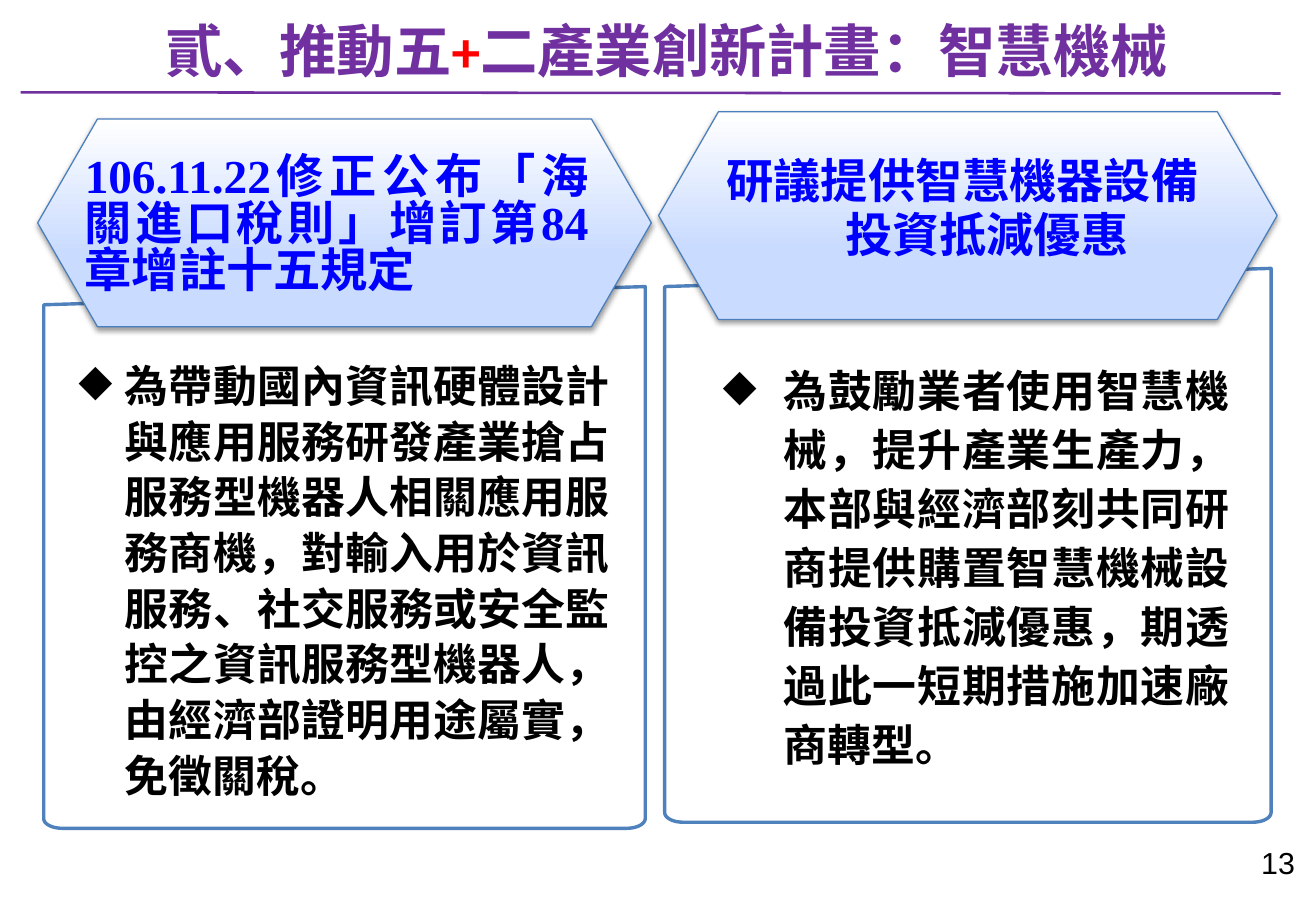
import math
from lxml import etree
from pptx import Presentation
from pptx.dml.color import RGBColor
from pptx.enum.shapes import MSO_CONNECTOR, MSO_SHAPE
from pptx.enum.text import MSO_AUTO_SIZE, PP_ALIGN
from pptx.oxml.ns import qn
from pptx.util import Inches, Pt

STRAIGHT = MSO_CONNECTOR.STRAIGHT
HEXAGON = MSO_SHAPE.HEXAGON
GROW = MSO_AUTO_SIZE.SHAPE_TO_FIT_TEXT
LEFT, CENTER, JUSTIFY = PP_ALIGN.LEFT, PP_ALIGN.CENTER, PP_ALIGN.JUSTIFY

THEME = {
    "purple": RGBColor(0x70, 0x30, 0xA0),
    "red": RGBColor(0xFF, 0x00, 0x00),
    "blue": RGBColor(0x00, 0x00, 0xFF),
    "black": RGBColor(0x00, 0x00, 0x00),
    "white": RGBColor(0xFF, 0xFF, 0xFF),
    "panel_line": RGBColor(0x4F, 0x81, 0xBD),
    "hexagon_line": RGBColor(0x4B, 0x7E, 0xBC),
    "hexagon_fill": RGBColor(0xC9, 0xDB, 0xFF),
    "serif": "Times New Roman",
    "sans": "Calibri",
    "cjk": "Noto Sans CJK TC",
    "number": "Arial",
    "title_size": Pt(34),
    "heading_size": Pt(28),
    "body_size": Pt(26),
    "number_size": Pt(18),
}


def add_text(box, runs, size, color, font, align, bold=True, wrap=True,
             indent=(0, 0), line=None, before=0, after=0, bullet=None):
    shape = slide.shapes.add_textbox(*map(Inches, box))
    frame = shape.text_frame
    frame.word_wrap = wrap
    frame.auto_size = GROW
    paragraph = frame.paragraphs[0]
    properties = paragraph._p.get_or_add_pPr()
    properties.set("marL", str(Inches(indent[0])))
    properties.set("indent", str(Inches(indent[1])))
    if bullet:
        etree.SubElement(properties, qn("a:buChar")).set("char", bullet)
    paragraph.alignment = align
    paragraph.space_before = Pt(before)
    paragraph.space_after = Pt(after)
    if line:
        paragraph.line_spacing = Pt(line)
    paragraph.font.size = THEME[size]
    paragraph.font.bold = bold
    paragraph.font.name = THEME[font]
    paragraph.font.color.rgb = THEME[color]
    for text, run_font, run_color in runs:
        run = paragraph.add_run()
        run.text = text
        if run_font:
            run.font.name = THEME[run_font]
        if run_color:
            run.font.color.rgb = THEME[run_color]


presentation = Presentation()
presentation.slide_width = Inches(10.83)
presentation.slide_height = Inches(7.5)
slide = presentation.slides.add_slide(presentation.slide_layouts[6])

title_rule = slide.shapes.add_connector(
    STRAIGHT, Inches(0.17), Inches(0.76), Inches(10.54), Inches(0.77))
title_rule.line.color.rgb = THEME["purple"]
title_rule.line.width = Pt(1.5)
etree.SubElement(title_rule._element.spPr, qn("a:effectLst"))

CORNER_WIDTH, CORNER_HEIGHT = 0.15, 0.08
QUARTER = [math.radians(angle) for angle in range(0, 91, 10)]

columns = [
    {
        "panel": (0.36, 2.36, 5.31, 6.82),
        "hexagon": (0.31, 0.98, 5.05, 1.71),
        "heading": dict(
            box=(0.6, 1.23, 4.34, 1.28), align=JUSTIFY, line=28,
            runs=[("106.11.22修正公布", None, None), ("「", "cjk", None),
                  ("海關進口稅則", None, None), ("」", "cjk", None),
                  ("增訂第84章增註十五規定", None, None)]),
        "body": dict(
            box=(0.55, 2.88, 4.57, 3.77), indent=(0.38, -0.38), line=33, before=12,
            runs=[("為帶動國內資訊硬體設計與應用服務研發產業搶占服務型機器人相關應用服務商機，"
                   "對輸入用於資訊服務、社交服務或安全監控之資訊服務型機器人，"
                   "由經濟部證明用途屬實，免徵關稅。", None, None)]),
    },
    {
        "panel": (5.47, 2.21, 10.46, 6.77),
        "hexagon": (5.42, 0.92, 5.09, 1.71),
        "heading": dict(
            box=(5.85, 1.22, 4.14, 1), align=CENTER, line=32, indent=(0.4, -0.4),
            runs=[("研議提供智慧機器設備投資抵減優惠", None, None)]),
        "body": dict(
            box=(5.85, 2.89, 4.37, 3.54), indent=(0.5, -0.5), line=35,
            runs=[("為鼓勵業者使用智慧機械，提升產業生產力，本部與經濟部刻共同研商提供"
                   "購置智慧機械設備投資抵減優惠，期透過此一短期措施加速廠商轉型。", None, None)]),
    },
]

for column in columns:
    left, top, right, bottom = column["panel"]
    corner_y = bottom - CORNER_HEIGHT
    right_corner = [(right - CORNER_WIDTH * (1 - math.cos(angle)),
                     corner_y + CORNER_HEIGHT * math.sin(angle)) for angle in QUARTER]
    left_corner = [(left + right - x, y) for x, y in reversed(right_corner)]
    outline = right_corner + left_corner + [(left, top + 0.15)]
    builder = slide.shapes.build_freeform(Inches(right), Inches(top))
    builder.add_line_segments([(Inches(x), Inches(y)) for x, y in outline], close=True)
    panel = builder.convert_to_shape()
    panel.shadow.inherit = False
    panel.fill.solid()
    panel.fill.fore_color.rgb = THEME["white"]
    panel.line.color.rgb = THEME["panel_line"]
    panel.line.width = Pt(2)

    hexagon = slide.shapes.add_shape(HEXAGON, *map(Inches, column["hexagon"]))
    hexagon.adjustments[0] = 0.288
    hexagon.fill.gradient()
    hexagon.fill.gradient_angle = 90
    stops = hexagon.fill.gradient_stops
    for stop, position, color in zip(stops, (0.35, 1), ("hexagon_fill", "white")):
        stop.position = position
        stop.color.rgb = THEME[color]
    hexagon.line.color.rgb = THEME["hexagon_line"]
    hexagon.line.width = Pt(0.75)
    hexagon.shadow.inherit = False
    effects = hexagon._element.spPr.find(qn("a:effectLst"))
    shadow = etree.SubElement(effects, qn("a:outerShdw"), blurRad=str(Pt(3.1)),
                              dist=str(Pt(1.6)), dir="5400000", rotWithShape="0")
    shadow_color = etree.SubElement(shadow, qn("a:srgbClr"), val=str(THEME["black"]))
    etree.SubElement(shadow_color, qn("a:alpha"), val="38000")

    add_text(**column["heading"], size="heading_size", color="blue", font="serif")
    add_text(**column["body"], size="body_size", color="black", font="serif",
             align=JUSTIFY, after=12, bullet="◆")

add_text((0.6, 0.08, 9.77, 0.67),
         [("貳、", "serif", None), ("推動五", None, None), ("+", None, "red"),
          ("二產業創新計畫", None, None), ("：", "cjk", None), ("智慧機械", None, None)],
         "title_size", "purple", "sans", CENTER)
add_text((10.28, 6.9, 0.48, 0.4), [("13", None, None)],
         "number_size", "black", "number", LEFT, bold=False, wrap=False)

presentation.save("out.pptx")
